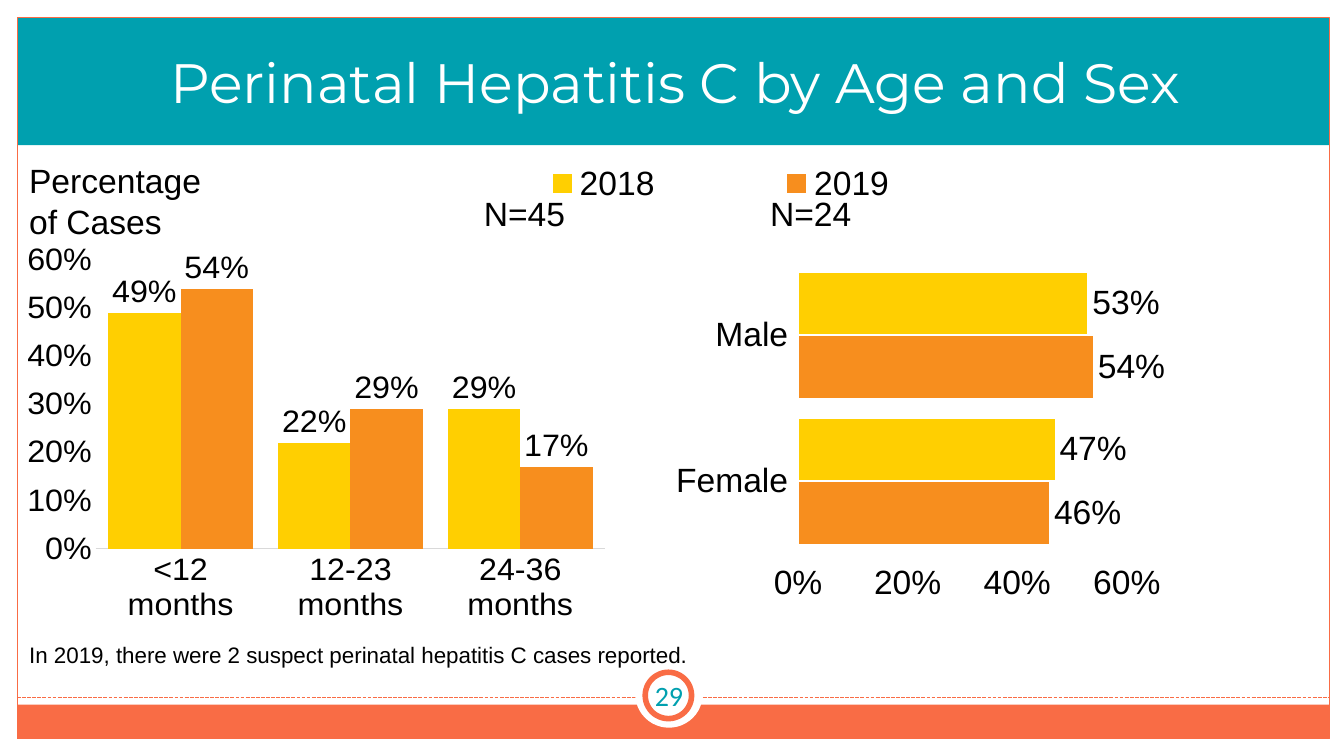
from lxml import etree
from pptx import Presentation, util as u
from pptx.chart.data import CategoryChartData
from pptx.dml.color import RGBColor
from pptx.enum import chart as ch, dml, shapes, text
from pptx.oxml import parse_xml
from pptx.oxml.ns import nsdecls, qn

W, H = u.Inches(13.33), u.Inches(7.5)
TEAL, CORAL, YELLOW, ORANGE = "00A0AF", "F96C45", "FFCF01", "F78E1E"
WHITE, BLACK, GREY = "FFFFFF", "000000", "D9D9D9"
LEFT, WIDTH = 1.27, 97.67


def rgb(value):
    return RGBColor.from_string(value)


def box(x, y, w, h):
    return [round(v * full / 100) for v, full in ((x, W), (y, H), (w, W), (h, H))]


def set_font(font, size, color=BLACK, name="Arial"):
    font.size, font.name, font.bold = u.Pt(size), name, False
    font.color.rgb = rgb(color)


def set_line(line, color=None, width=0.75):
    if color:
        line.color.rgb = rgb(color)
        line.width = u.Pt(width)
    else:
        line.fill.background()


def add_panel(s, kind, area, fill=None, line=None, width=0.75):
    sp = s.shapes.add_shape(kind, *box(*area))
    sp.shadow.inherit = False
    if fill:
        sp.fill.solid()
        sp.fill.fore_color.rgb = rgb(fill)
    else:
        sp.fill.background()
    set_line(sp.line, line, width)


def add_rule(s, y):
    x, y, w, _ = box(LEFT, y, WIDTH, 0)
    line = s.shapes.add_connector(shapes.MSO_CONNECTOR.STRAIGHT, x, y, x + w, y)
    set_line(line.line, CORAL, 0.9)
    line.line.dash_style = dml.MSO_LINE.SQUARE_DOT
    etree.SubElement(line._element.spPr, qn("a:effectLst"))


def add_text(s, area, lines, size, color=BLACK, name="Arial", align=None, anchor=None, tab=None):
    tf = s.shapes.add_textbox(*box(*area)).text_frame
    tf.word_wrap = True
    tf.vertical_anchor = anchor
    for i, line in enumerate(lines):
        p = tf.paragraphs[0] if i == 0 else tf.add_paragraph()
        p.text = line
        p.alignment = align
        if tab:
            tabs = etree.SubElement(p._p.get_or_add_pPr(), qn("a:tabLst"))
            etree.SubElement(tabs, qn("a:tab"), pos=str(round(tab * W / 100)), algn="l")
        set_font(p.font, size, color, name)


def set_layout(parent, index, x, y, w, h, inner=False):
    for old in parent.findall(qn("c:layout")):
        parent.remove(old)
    layout = etree.Element(qn("c:layout"))
    manual = etree.SubElement(layout, qn("c:manualLayout"))
    if inner:
        etree.SubElement(manual, qn("c:layoutTarget"), val="inner")
    settings = dict(xMode="edge", yMode="edge", x=x, y=y, w=w, h=h)
    for tag, value in settings.items():
        etree.SubElement(manual, qn("c:" + tag), val=str(value))
    parent.insert(index, layout)


def style_axis(axis, line=None, tick=ch.XL_TICK_MARK.NONE):
    axis.major_tick_mark = tick
    axis.minor_tick_mark = ch.XL_TICK_MARK.NONE
    axis.has_major_gridlines = False
    set_font(axis.tick_labels.font, 24)
    set_line(axis.format.line, line)


def add_bars(s, kind, area, plot_area, cats, series, gap, step, tick, axis_line=None, outline=None):
    data = CategoryChartData(number_format="0%")
    data.categories = cats
    for name, values, _ in series:
        data.add_series(name, values)
    chart = s.shapes.add_chart(kind, *box(*area), data).chart
    chart.has_title = chart.has_legend = False
    set_font(chart.font, 24)
    chart._chartSpace.find(qn("c:chart")).addnext(parse_xml(
        f'<c:spPr {nsdecls("c", "a")}><a:noFill/><a:ln><a:noFill/></a:ln></c:spPr>'))
    set_layout(chart._chartSpace.chart.plotArea, 0, *plot_area, inner=True)
    style_axis(chart.category_axis, axis_line, tick)
    style_axis(chart.value_axis, None, tick)
    chart.value_axis.major_unit = step
    chart.value_axis.tick_labels.number_format = "0%"
    chart.value_axis.tick_labels.number_format_is_linked = False
    plot = chart.plots[0]
    plot.gap_width, plot.overlap, plot.vary_by_categories = gap, 0, False
    for ser, (_, _, color) in zip(plot.series, series):
        ser.format.fill.solid()
        ser.format.fill.fore_color.rgb = rgb(color)
        set_line(ser.format.line, outline, 1.5)
        labels = ser.data_labels
        labels.show_value = True
        labels.position = ch.XL_LABEL_POSITION.OUTSIDE_END
        labels.number_format, labels.number_format_is_linked = "0%", False
        set_font(labels.font, 24)
    return chart


def add_legend(chart, *area):
    chart.has_legend = True
    legend = chart.legend
    legend.position = ch.XL_LEGEND_POSITION.RIGHT
    legend.include_in_layout = False
    set_font(legend.font, 24)
    set_layout(legend._element, 1, *area)


def add_frame(s):
    rect, oval = shapes.MSO_SHAPE.RECTANGLE, shapes.MSO_SHAPE.OVAL
    add_panel(s, rect, (LEFT, 2.4, WIDTH, 16.8), TEAL)
    add_panel(s, rect, (LEFT, 93.2, WIDTH, 4.53), CORAL)
    add_panel(s, rect, (LEFT, 2.27, WIDTH, 95.47), line=CORAL)
    add_rule(s, 92.27)
    add_panel(s, oval, (47.26, 87.33, 5.03, 8.93), WHITE)
    add_panel(s, oval, (48.01, 88.93, 3.45, 6.13), WHITE, CORAL, 4)
    add_text(s, (46.59, 88.8, 6.38, 6.4), ["29"], 20, TEAL, "Calibri",
             text.PP_ALIGN.CENTER, text.MSO_ANCHOR.MIDDLE)


def add_title(s, words):
    title = s.shapes.title
    title.left, title.top, title.width, title.height = box(5.55, 3.47, 89.35, 15.73)
    tf = title.text_frame
    tf.text = words
    tf.vertical_anchor = text.MSO_ANCHOR.MIDDLE
    p = tf.paragraphs[0]
    p.alignment, p.line_spacing = text.PP_ALIGN.CENTER, 0.9
    set_font(p.font, 39.6, WHITE, "Montserrat")
    s.shapes._spTree.append(title._element)


def main():
    prs = Presentation()
    prs.slide_width, prs.slide_height = W, H
    s = prs.slides.add_slide(prs.slide_layouts[5])
    add_frame(s)
    add_title(s, "Perinatal Hepatitis C by Age and Sex")
    add_text(s, (1.43, 84.13, 51.76, 4.93),
             ["In 2019, there were 2 suspect perinatal hepatitis C cases reported."], 16)
    add_text(s, (1.43, 20.53, 14.85, 14), ["Percentage", "of Cases"], 24)
    add_text(s, (35.26, 24.8, 40.14, 20.4), ["N=45\tN=24"], 24, tab=21.3)
    add_bars(s, ch.XL_CHART_TYPE.COLUMN_CLUSTERED, (2.03, 25.73, 45.31, 56.53),
             (0.074, 0.166, 0.873, 0.736), ["<12 months", "12-23 months", "24-36 months"],
             [("Series 1", (0.49, 0.22, 0.29), YELLOW), ("Series 2", (0.54, 0.29, 0.17), ORANGE)],
             35, 0.1, ch.XL_TICK_MARK.NONE, axis_line=GREY)
    by_sex = add_bars(s, ch.XL_CHART_TYPE.BAR_CLUSTERED, (20.41, 19.2, 72.99, 63.73),
                      (0.534, 0.243, 0.419, 0.606), ["Female", "Male"],
                      [("2019", (0.46, 0.54), ORANGE), ("2018", (0.47, 0.53), YELLOW)],
                      30, 0.2, ch.XL_TICK_MARK.OUTSIDE, outline=WHITE)
    by_sex.value_axis.minimum_scale, by_sex.value_axis.maximum_scale = 0, 0.75
    add_legend(by_sex, 0.16, 0.03, 0.59, 0.1)
    prs.save("out.pptx")


if __name__ == "__main__":
    main()
